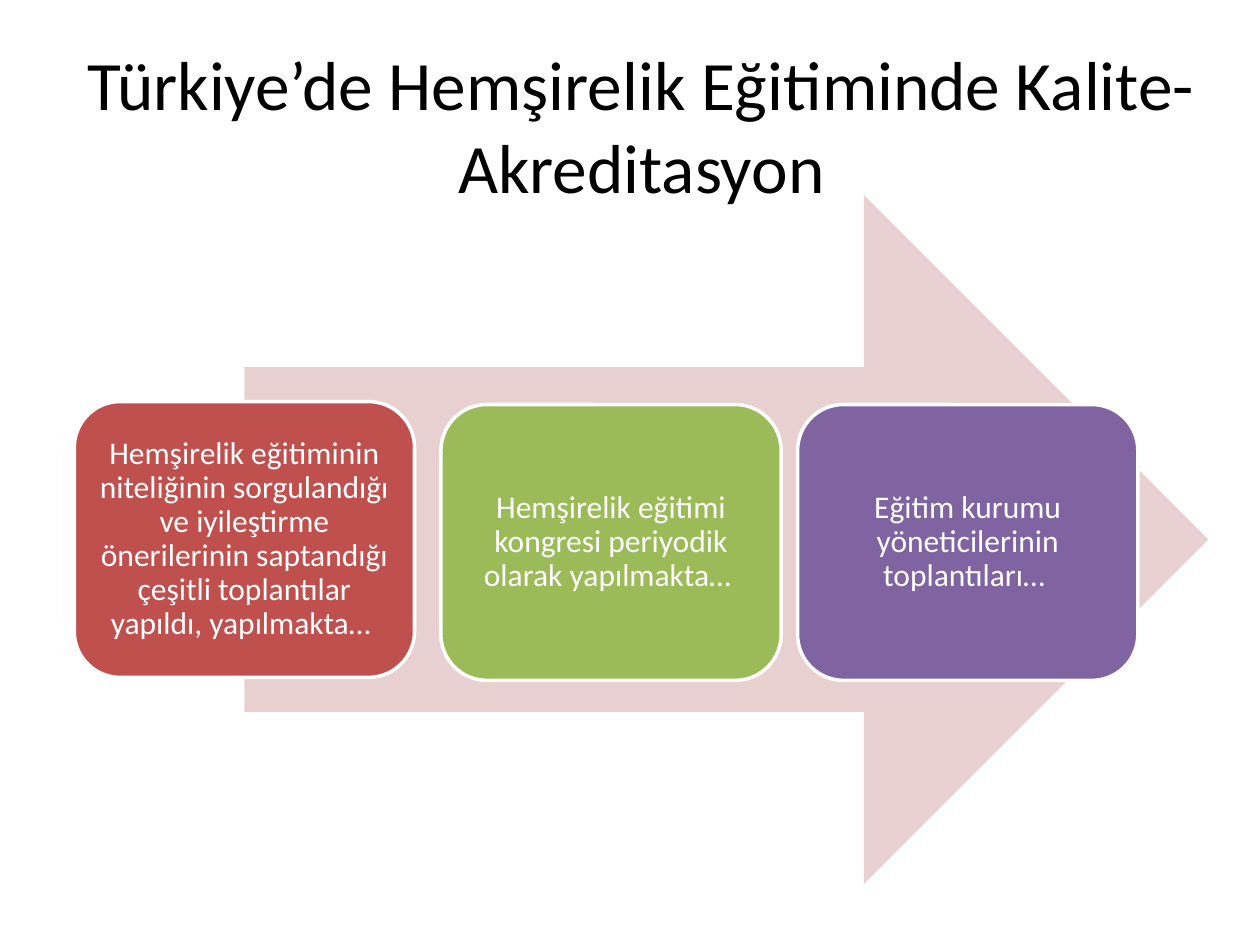
from pptx import Presentation
from pptx.dml.color import RGBColor
from pptx.enum.shapes import MSO_SHAPE
from pptx.enum.text import MSO_ANCHOR, MSO_AUTO_SIZE, PP_ALIGN
from pptx.util import Pt

ARROW, ROUNDED = MSO_SHAPE.RIGHT_ARROW, MSO_SHAPE.ROUNDED_RECTANGLE
MIDDLE, CENTER, NO_FIT = MSO_ANCHOR.MIDDLE, PP_ALIGN.CENTER, MSO_AUTO_SIZE.NONE

BLACK = RGBColor(0x00, 0x00, 0x00)
WHITE = RGBColor(0xFF, 0xFF, 0xFF)
PINK = RGBColor(0xE8, 0xD0, 0xD0)
RED = RGBColor(0xC0, 0x50, 0x4D)
GREEN = RGBColor(0x9B, 0xBB, 0x59)
PURPLE = RGBColor(0x80, 0x64, 0xA2)

FONT = "Calibri"
BOX_W, BOX_H = 194.4, 157.6
BOXES = [
    (42.5, 229.5, RED, "Hemşirelik eğitiminin niteliğinin sorgulandığı ve iyileştirme "
     "önerilerinin saptandığı çeşitli toplantılar yapıldı, yapılmakta… "),
    (252, 231.2, GREEN, "Hemşirelik eğitimi kongresi periyodik olarak yapılmakta… "),
    (455.8, 231.2, PURPLE, "Eğitim kurumu yöneticilerinin toplantıları… "),
]


def set_text(sp, text, size, color, spacing=1.0, inset=None):
    """Write centred text into a shape."""
    tf = sp.text_frame
    tf.word_wrap = True
    tf.auto_size = NO_FIT
    tf.vertical_anchor = MIDDLE
    if inset is not None:
        tf.margin_left = tf.margin_right = tf.margin_top = tf.margin_bottom = Pt(inset)
    p = tf.paragraphs[0]
    p.alignment = CENTER
    p.line_spacing = spacing
    r = p.add_run()
    r.text = text
    r.font.name = FONT
    r.font.size = Pt(size)
    r.font.color.rgb = color


def add_title(s, text, x, y, w, h):
    """Place and fill the title placeholder."""
    sp = s.shapes.title
    sp.left, sp.top, sp.width, sp.height = Pt(x), Pt(y), Pt(w), Pt(h)
    set_text(sp, text, 39.6, BLACK)


def add_shape(s, kind, x, y, w, h, fill, line=None):
    """Add a flat filled shape with an optional outline."""
    sp = s.shapes.add_shape(kind, Pt(x), Pt(y), Pt(w), Pt(h))
    sp.shadow.inherit = False
    sp.fill.solid()
    sp.fill.fore_color.rgb = fill
    if line is None:
        sp.line.fill.background()
    else:
        sp.line.color.rgb = line
        sp.line.width = Pt(2)
    return sp


def main():
    """Build the slide and save it."""
    prs = Presentation()
    prs.slide_width, prs.slide_height = Pt(720), Pt(540)
    s = prs.slides.add_slide(prs.slide_layouts[5])
    add_title(s, "Türkiye’de Hemşirelik Eğitiminde Kalite- Akreditasyon", 42.5, 26, 648, 90)
    add_shape(s, ARROW, 139.7, 111.4, 550.8, 393.8, PINK)
    for x, y, fill, text in BOXES:
        sp = add_shape(s, ROUNDED, x, y, BOX_W, BOX_H, fill, WHITE)
        set_text(sp, text, 18, WHITE, spacing=0.9, inset=5)
    prs.save("out.pptx")


if __name__ == "__main__":
    main()
